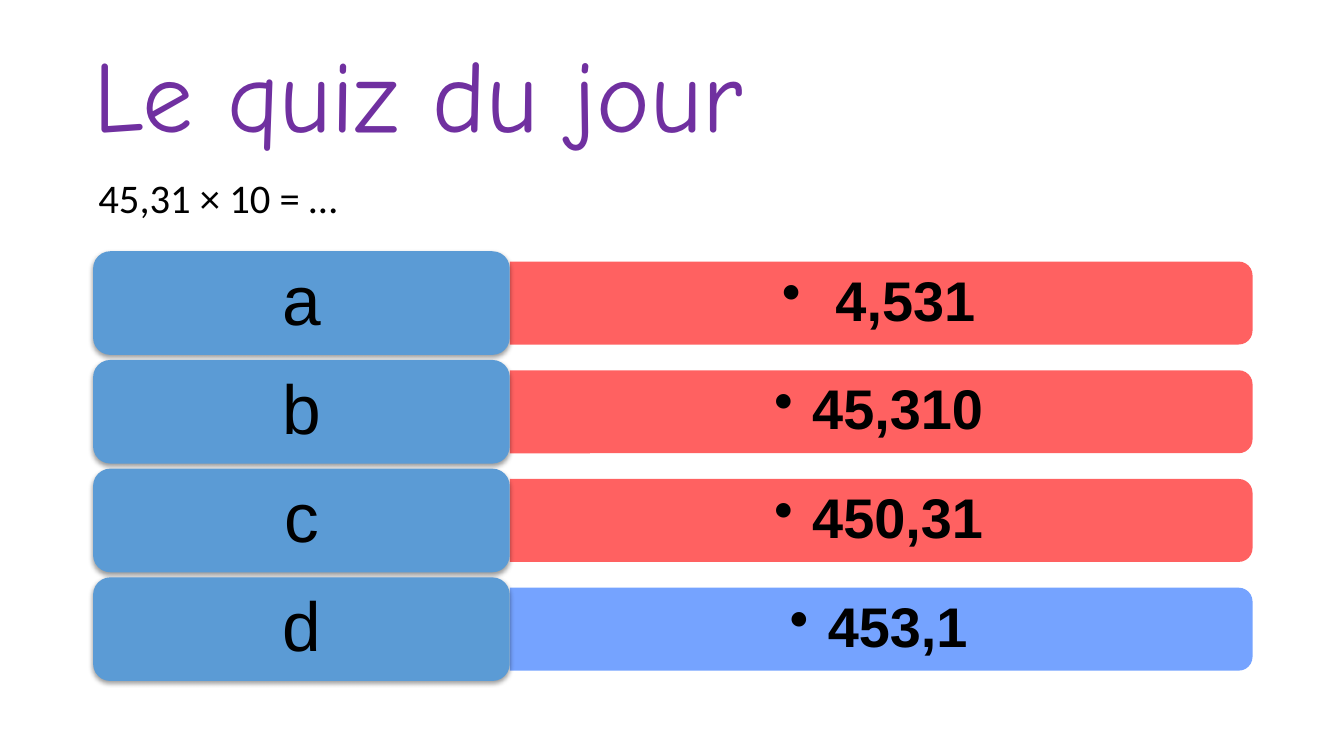
from lxml.etree import SubElement
from pptx import Presentation
from pptx.dml.color import RGBColor
from pptx.enum.shapes import MSO_SHAPE
from pptx.enum.text import MSO_ANCHOR, MSO_AUTO_SIZE, PP_ALIGN
from pptx.oxml.ns import qn
from pptx.util import Pt

# Content
TITLE = "Le quiz du jour"
QUESTION = "45,31 × 10 = …"
ANSWERS = [("a", " 4,531", False), ("b", "45,310", False),
           ("c", "450,31", False), ("d", "453,1", True)]

# Colours
PURPLE = RGBColor(0x70, 0x30, 0xA0)
BLACK = RGBColor(0, 0, 0)
LABEL_BLUE = RGBColor(0x5B, 0x9B, 0xD5)
WRONG_RED = RGBColor(0xFF, 0x50, 0x50)
RIGHT_BLUE = RGBColor(0x66, 0x99, 0xFF)

# Text formats
TITLE_FONT = {"name": "Comic Neue", "size": Pt(60)}
QUESTION_FONT = {"name": "Calibri", "size": Pt(24)}
LABEL_FONT = {"name": "Arial", "size": Pt(41)}
ANSWER_FONT = {"name": "Arial", "size": Pt(33), "bold": True}
CENTRED = {"alignment": PP_ALIGN.CENTER, "line_spacing": 0.9}

# Layout in points
LEFT, FIRST_TOP, ROW_STEP = 55, 148.4, 64.2
LABEL_WIDTH, LABEL_HEIGHT = 246, 61.2
BAR_WIDTH, BAR_HEIGHT = 438.5, 49
BULLET_INDENT = 22.5


def set_all(target, values):
    for name, value in values.items():
        setattr(target, name, value)


def write(shape, text, font, color, paragraph_format, **frame_format):
    frame = shape.text_frame
    set_all(frame, frame_format)
    paragraph = frame.paragraphs[0]
    set_all(paragraph, paragraph_format)
    run = paragraph.add_run()
    run.text = text
    set_all(run.font, font)
    run.font.color.rgb = color
    return paragraph


def add_filled(slide, kind, box, color):
    shape = slide.shapes.add_shape(kind, *map(Pt, box))
    shape.shadow.inherit = False
    shape.fill.solid()
    shape.fill.fore_color.rgb = color
    shape.line.fill.background()
    return shape


def add_alpha(color_element, percent):
    SubElement(color_element, qn("a:alpha"), val=str(percent * 1000))


def add_bar(slide, left, top, color):
    # The bar stands upright and is turned so its round end points right
    bar = add_filled(slide, MSO_SHAPE.ROUND_2_SAME_RECTANGLE,
                     (left + (BAR_WIDTH - BAR_HEIGHT) / 2,
                      top - (BAR_WIDTH - BAR_HEIGHT) / 2,
                      BAR_HEIGHT, BAR_WIDTH), color)
    bar.rotation = 90
    add_alpha(bar.element.spPr.find(qn("a:solidFill"))[0], 90)


def add_answer(slide, left, top, text):
    box = slide.shapes.add_textbox(*map(Pt, (left, top, BAR_WIDTH - 3, BAR_HEIGHT - 5)))
    paragraph = write(box, text, ANSWER_FONT, BLACK, CENTRED, word_wrap=True,
                      vertical_anchor=MSO_ANCHOR.MIDDLE,
                      margin_left=Pt(10), margin_right=Pt(10),
                      margin_top=Pt(5), margin_bottom=Pt(5))
    properties = paragraph._p.get_or_add_pPr()
    properties.set("marL", str(Pt(BULLET_INDENT)))
    properties.set("indent", str(-Pt(BULLET_INDENT)))
    SubElement(properties, qn("a:buChar"), char="•")


def add_label(slide, top, letter):
    label = add_filled(slide, MSO_SHAPE.ROUNDED_RECTANGLE,
                       (LEFT, top, LABEL_WIDTH, LABEL_HEIGHT), LABEL_BLUE)
    effects = label.element.spPr.find(qn("a:effectLst"))
    shadow = SubElement(effects, qn("a:outerShdw"), blurRad=str(Pt(3.1)),
                        dist=str(Pt(1.6)), dir="5400000", rotWithShape="0")
    add_alpha(SubElement(shadow, qn("a:srgbClr"), val="000000"), 38)
    write(label, letter, LABEL_FONT, BLACK, CENTRED, word_wrap=True,
          vertical_anchor=MSO_ANCHOR.MIDDLE)


def main():
    presentation = Presentation()
    presentation.slide_width, presentation.slide_height = Pt(793.5), Pt(446.5)
    slide = presentation.slides.add_slide(presentation.slide_layouts[5])

    # Title, raised a little by its bottom margin
    title = slide.shapes.title
    set_all(title, {"left": Pt(LEFT), "top": Pt(16.5), "width": Pt(685), "height": Pt(107)})
    write(title, TITLE, TITLE_FONT, PURPLE,
          {"alignment": PP_ALIGN.LEFT, "line_spacing": 0.9},
          auto_size=MSO_AUTO_SIZE.NONE, vertical_anchor=MSO_ANCHOR.MIDDLE,
          margin_left=0, margin_right=0, margin_top=0, margin_bottom=Pt(22))

    # One row per answer: bar, answer text, letter
    bar_left = LEFT + LABEL_WIDTH
    for row, (letter, answer, is_right) in enumerate(ANSWERS):
        top = FIRST_TOP + row * ROW_STEP
        bar_top = top + (LABEL_HEIGHT - BAR_HEIGHT) / 2
        add_bar(slide, bar_left, bar_top, RIGHT_BLUE if is_right else WRONG_RED)
        add_answer(slide, bar_left, bar_top + 2.5, answer)
        add_label(slide, top, letter)

    # Question
    question = slide.shapes.add_textbox(Pt(51), Pt(98.5), Pt(165), Pt(36))
    write(question, QUESTION, QUESTION_FONT, BLACK, {}, word_wrap=False,
          auto_size=MSO_AUTO_SIZE.SHAPE_TO_FIT_TEXT)

    presentation.save("out.pptx")


if __name__ == "__main__":
    main()
